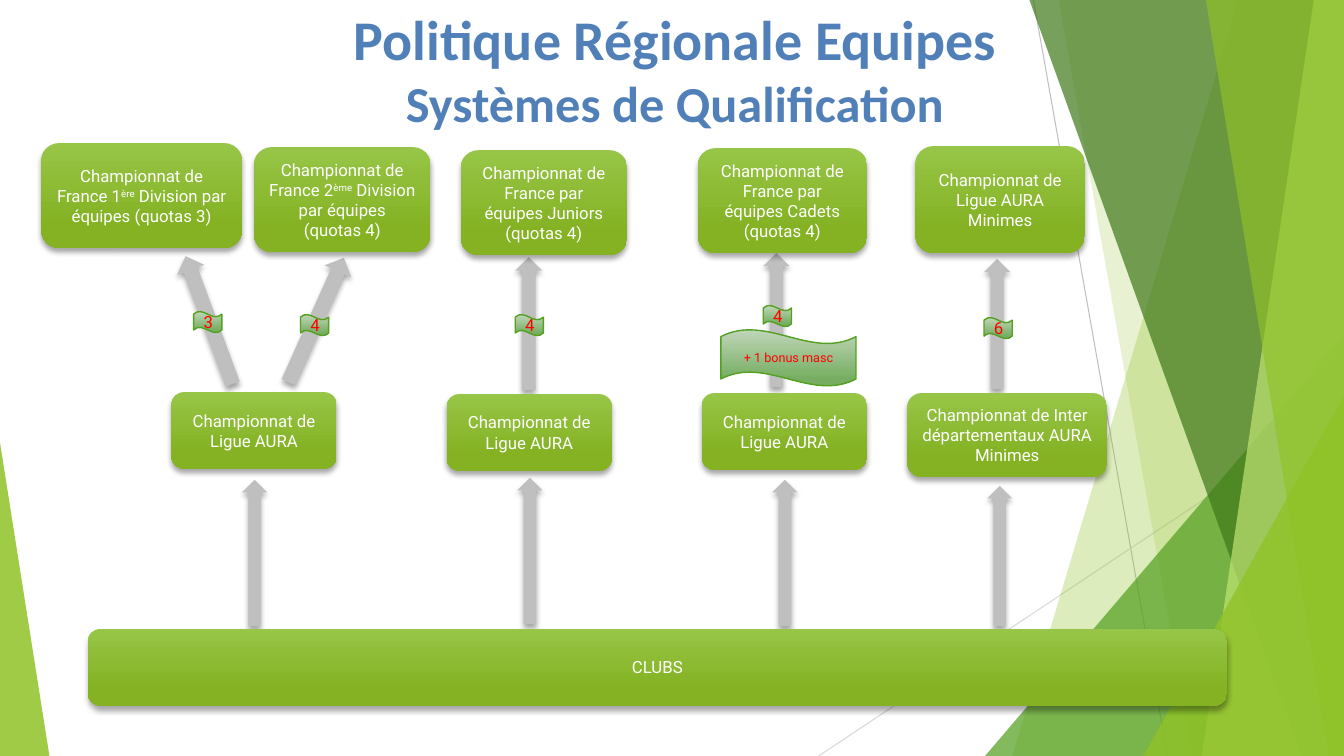
from lxml.etree import SubElement
from pptx import Presentation
from pptx.dml.color import RGBColor
from pptx.enum.shapes import MSO_CONNECTOR, MSO_SHAPE
from pptx.enum.text import MSO_ANCHOR, PP_ALIGN
from pptx.oxml.ns import qn
from pptx.util import Inches, Pt

WHITE = RGBColor(0xFF, 0xFF, 0xFF)
RED = RGBColor(0xFF, 0x00, 0x00)
BLUE = RGBColor(0x51, 0x80, 0xB8)
GRAY = RGBColor(0xBF, 0xBF, 0xBF)
PALE = RGBColor(0xD9, 0xD9, 0xD9)
LIME = RGBColor(0x90, 0xC2, 0x26)
LEAF = RGBColor(0x54, 0xA0, 0x21)
DARK = RGBColor(0x3F, 0x78, 0x19)
LIGHT = RGBColor(0xC0, 0xE4, 0x74)
BOX_FADE = (RGBColor(0x97, 0xC5, 0x47), RGBColor(0x84, 0xB2, 0x23), 0.78)
FLAG_FADE = (RGBColor(0xC0, 0xD6, 0xB9), RGBColor(0x76, 0xAD, 0x61), 0.88)

WIDE, HIGH = 13.33, 7.5

deck = Presentation()
deck.slide_width, deck.slide_height = Inches(WIDE), Inches(HIGH)
slide = deck.slides.add_slide(deck.slide_layouts[6])
shapes = slide.shapes


def write(shape, text, size=12, font="Roboto", color=WHITE, bold=False,
          anchor=MSO_ANCHOR.MIDDLE):
    """Centre the text; parts between ^ marks are superscript."""
    frame = shape.text_frame
    frame.word_wrap = True
    frame.vertical_anchor = anchor
    for row, line in enumerate(text.split("\n")):
        para = frame.add_paragraph() if row else frame.paragraphs[0]
        para.alignment = PP_ALIGN.CENTER
        for part, piece in enumerate(line.split("^")):
            run = para.add_run()
            run.text = piece
            run.font.size = Pt(size)
            run.font.name = font
            run.font.bold = bold
            run.font.color.rgb = color
            if part % 2:
                run._r.get_or_add_rPr().set("baseline", "30000")
    return frame


def paint(shape, color=None, fade=None, alpha=None, edge=None, shade=False):
    """Set fill, outline and shadow; fade is (top, bottom, stop)."""
    shape.shadow.inherit = False
    if fade:
        shape.fill.gradient()
        shape.fill.gradient_angle = 270
        first, last = shape.fill.gradient_stops
        first.color.rgb, last.color.rgb = fade[:2]
        first.position, last.position = 0, fade[2]
    else:
        shape.fill.solid()
        shape.fill.fore_color.rgb = color
    if alpha:
        tint = shape._element.spPr.find(f"{qn('a:solidFill')}/{qn('a:srgbClr')}")
        SubElement(tint, qn("a:alpha"), val=str(alpha * 1000))
    if edge:
        shape.line.color.rgb = edge
        shape.line.width = Pt(1)
    else:
        shape.line.fill.background()
    if shade:
        glow = SubElement(shape._element.spPr.find(qn("a:effectLst")), qn("a:outerShdw"),
                          blurRad=str(Pt(4)), dist=str(Pt(3)), dir="5400000",
                          rotWithShape="0")
        black = SubElement(glow, qn("a:srgbClr"), val="000000")
        SubElement(black, qn("a:alpha"), val="35000")


# Background lines
for x1, y1, x2, y2, color in [
    (10.25, 0, 11.58, HIGH, GRAY),
    (WIDE, 4.03, 8.12, HIGH, PALE),
]:
    line = shapes.add_connector(MSO_CONNECTOR.STRAIGHT, Inches(x1), Inches(y1),
                                Inches(x2), Inches(y2))
    line.line.color.rgb = color
    line.line.width = Pt(0.75)
    SubElement(line._element.spPr, qn("a:effectLst"))

# Background facets: bands by top and bottom x, triangles by box and apex
for kind, spot, color, alpha in [
    ("band", (12.28, 10.04), LIME, 30),
    ("band", (10.5, 11.83), LIME, 20),
    ("peak", (9.77, 3.33, 3.56, 4.17, 1), LEAF, 72),
    ("band", (10.21, 12.91), DARK, 70),
    ("band", (13.03, 11.92), LIGHT, 70),
    ("band", (11.96, 13.18), LIME, 65),
    ("peak", (11.34, 3.93, 1.99, 3.57, 1), LIME, 80),
    ("peak", (0, 4.39, 0.49, 3.11, 0), LIME, 85),
]:
    if kind == "band":
        top, base = spot
        pen = shapes.build_freeform(Inches(top), 0)
        pen.add_line_segments([(Inches(x), Inches(y)) for x, y in
                               [(WIDE, 0), (WIDE, HIGH), (base, HIGH)]])
        facet = pen.convert_to_shape()
    else:
        facet = shapes.add_shape(MSO_SHAPE.ISOSCELES_TRIANGLE, *map(Inches, spot[:4]))
        facet.adjustments[0] = spot[4]
    paint(facet, color, alpha=alpha)

# Title
title = shapes.add_textbox(Inches(0.71), 0, Inches(11.97), Inches(1.25))
frame = write(title, "Politique Régionale Equipes\nSystèmes de Qualification", size=40,
              font="Calibri", color=BLUE, bold=True, anchor=MSO_ANCHOR.TOP)
frame.paragraphs[1].runs[0].font.size = Pt(36)

# Arrows
for x, y, w, h, turn in [
    (1.93, 2.5, 0.29, 1.35, -20.3),
    (2.99, 2.5, 0.29, 1.35, 24.1),
    (5.11, 2.55, 0.27, 1.32, 0),
    (7.57, 2.51, 0.26, 1.33, 0),
    (9.76, 2.57, 0.26, 1.29, 0),
    (2.4, 4.76, 0.25, 1.45, 0),
    (5.13, 4.74, 0.25, 1.45, 0),
    (7.66, 4.76, 0.25, 1.45, 0),
    (9.79, 4.82, 0.25, 1.39, 0),
]:
    arrow = shapes.add_shape(MSO_SHAPE.UP_ARROW, Inches(x), Inches(y), Inches(w), Inches(h))
    arrow.rotation = turn
    paint(arrow, GRAY, shade=True)

# Championship boxes, top row to clubs
LIGUE = "Championnat de Ligue AURA"
FRANCE = "Championnat de France"
for x, y, w, h, text in [
    (0.41, 1.42, 1.99, 1.04, f"{FRANCE} 1^ère^ Division par équipes (quotas 3)"),
    (2.52, 1.46, 1.75, 1.04, f"{FRANCE} 2^ème^ Division par équipes (quotas 4)"),
    (4.57, 1.49, 1.65, 1.04, f"{FRANCE} par équipes Juniors (quotas 4)"),
    (6.92, 1.47, 1.68, 1.04, f"{FRANCE} par équipes Cadets (quotas 4)"),
    (9.08, 1.45, 1.68, 1.06, f"{LIGUE}\nMinimes"),
    (1.7, 3.89, 1.64, 0.76, LIGUE),
    (4.43, 3.91, 1.64, 0.76, LIGUE),
    (6.96, 3.9, 1.64, 0.76, LIGUE),
    (9, 3.9, 1.98, 0.83, "Championnat de Inter départementaux AURA Minimes"),
    (0.87, 6.24, 11.3, 0.76, "CLUBS"),
]:
    box = shapes.add_shape(MSO_SHAPE.ROUNDED_RECTANGLE, Inches(x), Inches(y),
                           Inches(w), Inches(h))
    paint(box, fade=BOX_FADE, shade=True)
    write(box, text)

# Quota flags
for x, y, w, h, text, size in [
    (1.92, 3.09, 0.28, 0.21, "3", 12),
    (2.98, 3.12, 0.28, 0.21, "4", 12),
    (5.11, 3.12, 0.28, 0.21, "4", 12),
    (7.57, 3.03, 0.28, 0.21, "4", 12),
    (7.15, 3.27, 1.34, 0.56, "+ 1 bonus masc", 9),
    (9.76, 3.15, 0.28, 0.21, "6", 12),
]:
    flag = shapes.add_shape(MSO_SHAPE.WAVE, Inches(x), Inches(y), Inches(w), Inches(h))
    paint(flag, fade=FLAG_FADE, edge=LEAF)
    write(flag, text, size=size, color=RED)

deck.save("out.pptx")
